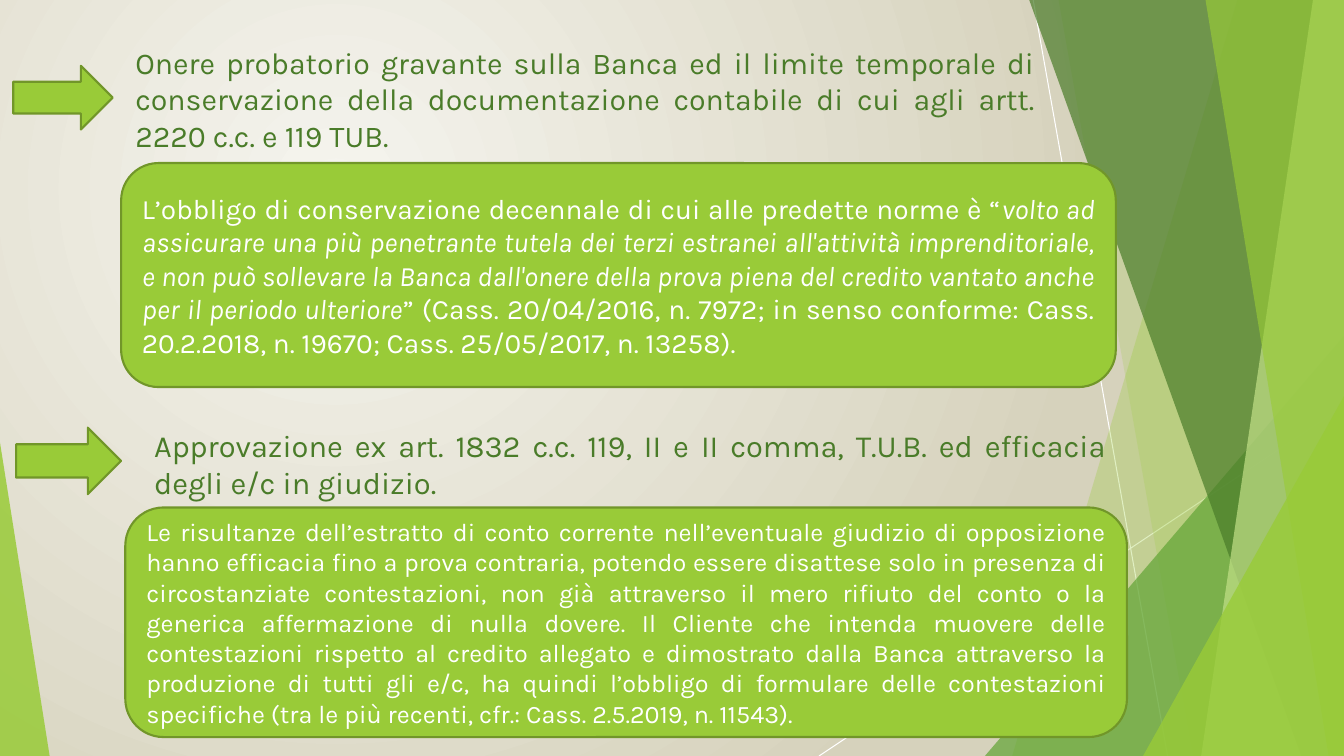
"""Builds a slide on the burden of proof for bank records and account statements."""
from lxml.etree import SubElement
from pptx import Presentation
from pptx.dml.color import RGBColor
from pptx.enum.shapes import MSO_CONNECTOR, MSO_SHAPE
from pptx.enum.text import MSO_ANCHOR, MSO_AUTO_SIZE, PP_ALIGN
from pptx.oxml.ns import qn
from pptx.util import Pt

COLORS = {
    "lime": "99CB38", "pale": "C2E088", "leaf": "63A537", "forest": "4A7C29",
    "edge": "719629", "white": "FFFFFF", "ivory": "F5F4EE", "sand": "D6D2BC",
}
WIDTH, HEIGHT = 960, 540


class SlideBuilder:
    """Holds the slide and its style, and adds each kind of element."""

    def __init__(self, slide, font):
        self.slide = slide
        self.shapes = slide.shapes
        self.font = font

    def color(self, name):
        """Return the named colour."""
        return RGBColor.from_string(COLORS[name])

    def background(self, center, rim):
        """Fill the background with a radial gradient."""
        fill = self.slide.background.fill
        fill.gradient()
        for stop, name in zip(fill.gradient_stops, (center, rim)):
            stop.color.rgb = self.color(name)
        gradient = self.slide.element.find(".//" + qn("a:gradFill"))
        linear = gradient.find(qn("a:lin"))
        radial = SubElement(gradient, qn("a:path"), {"path": "circle"})
        SubElement(radial, qn("a:fillToRect"),
                   {"l": "50000", "t": "50000", "r": "100000", "b": "100000"})
        gradient.replace(linear, radial)

    def ray(self, x1, y1, x2, y2):
        """Add a thin white line."""
        ray = self.shapes.add_connector(
            MSO_CONNECTOR.STRAIGHT, Pt(x1), Pt(y1), Pt(x2), Pt(y2))
        ray.line.color.rgb = self.color("white")
        ray.line.width = Pt(0.75)
        SubElement(ray.element.spPr, qn("a:effectLst"))

    def glass(self, shape, color, opacity):
        """Give a decorative shape a translucent fill."""
        shape.shadow.inherit = False
        shape.fill.solid()
        shape.fill.fore_color.rgb = self.color(color)
        tint = shape.element.spPr.find(".//" + qn("a:srgbClr"))
        SubElement(tint, qn("a:alpha"), {"val": str(opacity * 1000)})
        shape.line.fill.background()

    def band(self, top_x, bottom_x, color, opacity):
        """Add a full-height band reaching the right edge."""
        outline = self.shapes.build_freeform(Pt(top_x), Pt(-0.6))
        outline.add_line_segments([
            (Pt(WIDTH), Pt(-0.6)), (Pt(WIDTH), Pt(HEIGHT)), (Pt(bottom_x), Pt(HEIGHT))])
        self.glass(outline.convert_to_shape(), color, opacity)

    def corner(self, left, top, width, apex, color, opacity):
        """Add a triangle standing on the bottom edge."""
        corner = self.shapes.add_shape(
            MSO_SHAPE.ISOSCELES_TRIANGLE, Pt(left), Pt(top), Pt(width), Pt(HEIGHT - top))
        corner.adjustments[0] = apex
        self.glass(corner, color, opacity)

    def panel(self, kind, left, top, width, height):
        """Add an outlined lime shape."""
        panel = self.shapes.add_shape(kind, Pt(left), Pt(top), Pt(width), Pt(height))
        panel.shadow.inherit = False
        panel.fill.solid()
        panel.fill.fore_color.rgb = self.color("lime")
        panel.line.color.rgb = self.color("edge")
        panel.line.width = Pt(1.5)
        return panel

    def set_text(self, shape, parts, size, color, anchor):
        """Set justified text whose every second part is italic."""
        frame = shape.text_frame
        frame.word_wrap = True
        frame.auto_size = MSO_AUTO_SIZE.NONE
        frame.vertical_anchor = anchor
        paragraph = frame.paragraphs[0]
        paragraph.alignment = PP_ALIGN.JUSTIFY
        for index, part in enumerate(parts):
            run = paragraph.add_run()
            run.text = part
            run.font.name = self.font
            run.font.size = Pt(size)
            run.font.italic = index % 2 == 1
            run.font.color.rgb = self.color(color)

    def title(self, left, top, width, height, text, size):
        """Place the title in front of the decoration."""
        title = self.shapes.title
        title.element.getparent().append(title.element)
        title.left, title.top, title.width, title.height = map(Pt, (left, top, width, height))
        self.set_text(title, [text], size, "forest", MSO_ANCHOR.TOP)

    def heading(self, left, top, width, height, text, size):
        """Add a green heading."""
        heading = self.shapes.add_textbox(Pt(left), Pt(top), Pt(width), Pt(height))
        self.set_text(heading, [text], size, "forest", MSO_ANCHOR.TOP)

    def card(self, kind, box, parts, size):
        """Add a lime card with white text."""
        self.set_text(self.panel(kind, *box), parts, size, "white", MSO_ANCHOR.MIDDLE)


def main():
    """Build and save the slide."""
    deck = Presentation()
    deck.slide_width, deck.slide_height = Pt(WIDTH), Pt(HEIGHT)
    page = SlideBuilder(deck.slides.add_slide(deck.slide_layouts[5]), "Karla")

    page.background("ivory", "sand")
    page.ray(738, 0, 834, HEIGHT)
    page.ray(WIDTH, 290, 585, HEIGHT)
    page.band(884, 723, "lime", 30)
    page.band(756, 852, "lime", 20)
    page.corner(703.5, 240, 256.5, 1, "leaf", 72)
    page.band(735, 929.5, "forest", 70)
    page.band(938, 858, "pale", 70)
    page.band(861, 949, "lime", 65)
    page.corner(816.5, 283, 143.5, 1, "lime", 80)
    page.corner(0, 316, 35.5, 0, "lime", 85)

    page.title(
        89.5, 28, 657, 83.5,
        "Onere probatorio gravante sulla Banca ed il limite temporale di conservazione "
        "della documentazione contabile di cui agli artt. 2220 c.c. e 119 TUB.", 21.6)
    page.card(
        MSO_SHAPE.FLOWCHART_ALTERNATE_PROCESS, (86.5, 116.5, 710.5, 160),
        ["L’obbligo di conservazione decennale di cui alle predette norme è “",
         "volto ad assicurare una più penetrante tutela dei terzi estranei all'attività "
         "imprenditoriale, e non può sollevare la Banca dall'onere della prova piena del "
         "credito vantato anche per il periodo ulteriore",
         "” (Cass. 20/04/2016, n. 7972; in senso conforme: Cass. 20.2.2018, n. 19670; "
         "Cass. 25/05/2017, n. 13258)."], 20)
    page.panel(MSO_SHAPE.RIGHT_ARROW, 9.5, 47, 71, 45.5)

    page.heading(
        103, 301.5, 694, 60.5,
        "Approvazione ex art. 1832 c.c. 119, II e II comma, T.U.B. ed efficacia "
        "degli e/c in giudizio.", 22)
    page.card(
        MSO_SHAPE.ROUNDED_RECTANGLE, (89.5, 362.5, 715.5, 164),
        ["Le risultanze dell’estratto di conto corrente nell’eventuale giudizio di "
         "opposizione hanno efficacia fino a prova contraria, potendo essere disattese solo "
         "in presenza di circostanziate contestazioni, non già attraverso il mero rifiuto "
         "del conto o la generica affermazione di nulla dovere. Il Cliente che intenda "
         "muovere delle contestazioni rispetto al credito allegato e dimostrato dalla Banca "
         "attraverso la produzione di tutti gli e/c, ha quindi l’obbligo di formulare delle "
         "contestazioni specifiche (tra le più recenti, cfr.: Cass. 2.5.2019, n. 11543)."], 18)
    page.panel(MSO_SHAPE.RIGHT_ARROW, 11.5, 305.5, 75, 47.5)

    deck.save("out.pptx")


if __name__ == "__main__":
    main()
